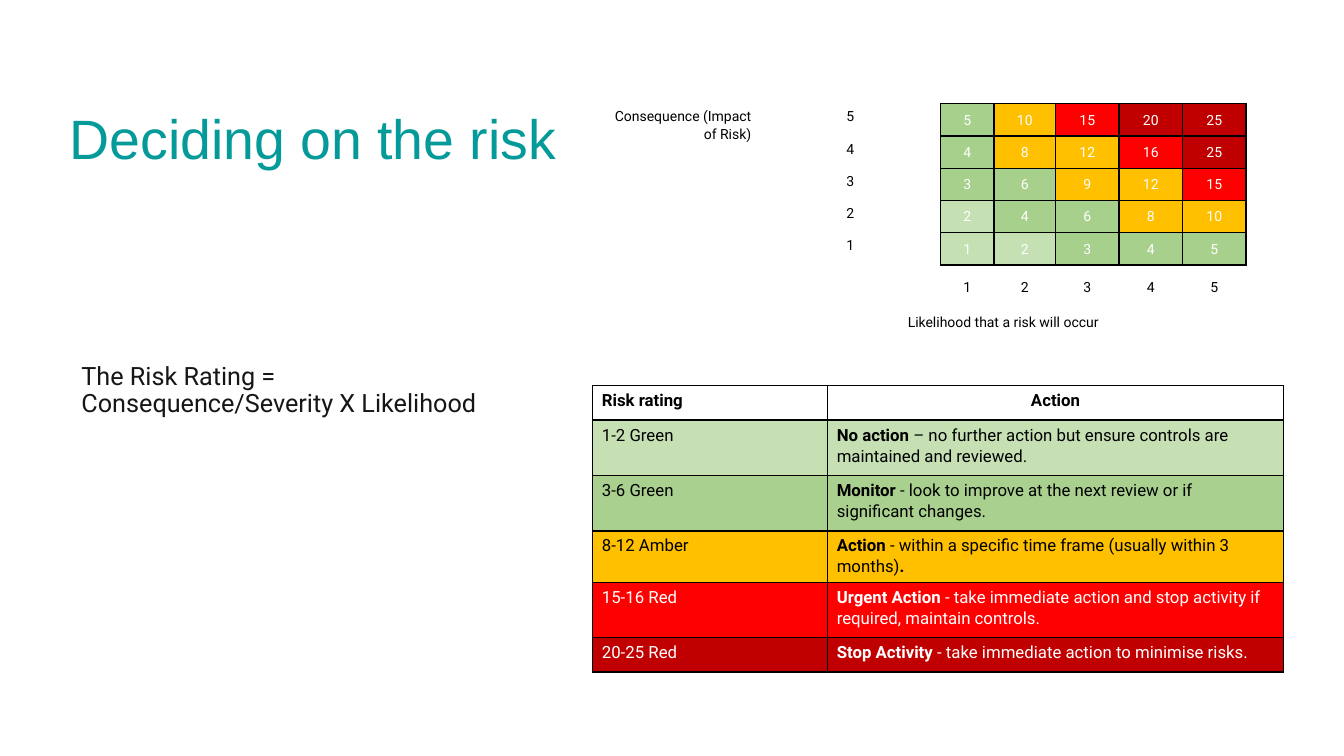
from lxml import etree
from pptx import Presentation
from pptx.dml.color import RGBColor
from pptx.enum.text import MSO_ANCHOR as Anchor, PP_ALIGN as Align
from pptx.oxml.ns import qn
from pptx.util import Inches, Pt

BLACK, WHITE = "000000", "FFFFFF"
NO_GRID_STYLE = "{2D5ABB26-0587-4C30-8999-92F81FD0307C}"


def write(holder, pieces, size, color=BLACK, align=Align.LEFT, spacing=1.07, font="Roboto"):
    """Fill a cell or box with (text, bold) pieces in one paragraph."""
    paragraph = holder.text_frame.paragraphs[0]
    paragraph.alignment = align
    paragraph.line_spacing = spacing
    for words, bold in pieces:
        run = paragraph.add_run()
        run.text = words
        run.font.size = Pt(size)
        run.font.name = font
        run.font.bold = bold
        run.font.color.rgb = RGBColor.from_string(color)


def paint(cell, fill=None):
    """Outline a cell in black and give it an optional fill."""
    properties = cell._tc.get_or_add_tcPr()
    for position, side in enumerate(("lnL", "lnR", "lnT", "lnB")):
        line = etree.Element(qn(f"a:{side}"), w=str(Pt(1)))
        solid = etree.SubElement(line, qn("a:solidFill"))
        etree.SubElement(solid, qn("a:srgbClr"), val=BLACK)
        properties.insert(position, line)
    if fill:
        cell.fill.solid()
        cell.fill.fore_color.rgb = RGBColor.from_string(fill)


deck = Presentation()
deck.slide_width, deck.slide_height = Inches(13.33), Inches(7.5)
slide = deck.slides.add_slide(deck.slide_layouts[6])

# Heading and formula
for words, box, anchor, size, color, font in [
    ("Deciding on the risk", (0.59, 1.03, 5.75, 0.74), Anchor.MIDDLE, 39.6, "049A99", "Arial"),
    ("The Risk Rating = Consequence/Severity X Likelihood", (0.71, 2.59, 4.52, 1.61),
     Anchor.BOTTOM, 18, "171616", "Roboto"),
]:
    text_box = slide.shapes.add_textbox(*map(Inches, box))
    text_box.text_frame.word_wrap = True
    text_box.text_frame.vertical_anchor = anchor
    write(text_box, [(words, False)], size, color, spacing=0.9, font=font)

# One grid holds the risk matrix above and the action list below
column_widths = [1.66, 0.67, 1.12, 0.53, 0.61, 0.63, 0.63, 0.63, 0.37]
row_heights = [0.32] * 5 + [0.44, 0.34, 0.42] + [0.34, 0.55, 0.55, 0.51, 0.55, 0.34]
frame = slide.shapes.add_table(len(row_heights), len(column_widths), Inches(5.88), Inches(1.03),
                               Inches(sum(column_widths)), Inches(sum(row_heights)))
grid = frame.table
grid.first_row = grid.horz_banding = False
grid._tbl.tblPr.find(qn("a:tableStyleId")).text = NO_GRID_STYLE
for column, width in zip(grid.columns, column_widths):
    column.width = Inches(width)
for row, height in zip(grid.rows, row_heights):
    row.height = Inches(height)
for cell in grid.iter_cells():
    cell.fill.background()
    cell.margin_left = cell.margin_right = Inches(0.07)
    cell.margin_top = cell.margin_bottom = 0

# Upper rating, matrix fill, list fill, list text colour, label, action
bands = [
    (2, "C5E0B3", "C6E0B4", BLACK, "1-2 Green",
     [("No action", True),
      (" – no further action but ensure controls are maintained and reviewed.", False)]),
    (6, "A8D08D", "A9D08E", BLACK, "3-6 Green",
     [("Monitor", True),
      (" - look to improve at the next review or if significant changes.", False)]),
    (12, "FFC000", "FFC000", BLACK, "8-12 Amber",
     [("Action", True),
      (" - within a specific time frame (usually within 3 months)", False), (".", True)]),
    (16, "FF0000", "FF0000", WHITE, "15-16 Red",
     [("Urgent Action ", True),
      ("- take immediate action and stop activity if required, maintain controls.", False)]),
    (25, "C00000", "C00000", WHITE, "20-25 Red",
     [("Stop Activity", True), (" - take immediate action to minimise risks.", False)]),
]

# Risk matrix
ratings = [
    [5, 10, 15, 20, 25],
    [4, 8, 12, 16, 25],
    [3, 6, 9, 12, 15],
    [2, 4, 6, 8, 10],
    [1, 2, 3, 4, 5],
]
first_rating_column = 3
likelihood_row = len(ratings)
axis_labels = [(0, 0, likelihood_row, 0, "Consequence (Impact of Risk)", Align.RIGHT),
               (likelihood_row + 1, 1, likelihood_row + 1, 7,
                "Likelihood that a risk will occur", Align.CENTER)]
axis_labels += [(row, 1, row, 2, str(5 - row), Align.CENTER) for row in range(5)]
for top, left, bottom, right, words, align in axis_labels:
    label = grid.cell(top, left)
    label.merge(grid.cell(bottom, right))
    label.margin_left = label.margin_right = Inches(0.09)
    label.margin_top = label.margin_bottom = Inches(0.04)
    write(label, [(words, False)], 10, align=align)

for row, row_ratings in enumerate(ratings):
    for column, rating in enumerate(row_ratings, first_rating_column):
        cell = grid.cell(row, column)
        cell.vertical_anchor = Anchor.MIDDLE
        paint(cell, next(band[1] for band in bands if rating <= band[0]))
        write(cell, [(str(rating), False)], 10, WHITE, Align.CENTER)
for likelihood in range(1, 6):
    cell = grid.cell(likelihood_row, first_rating_column + likelihood - 1)
    cell.vertical_anchor = Anchor.MIDDLE
    write(cell, [(str(likelihood), False)], 10, align=Align.CENTER)

# Action list
action_rows = [(None, BLACK, [("Risk rating", True)], [("Action", True)], Align.CENTER)]
action_rows += [(fill, color, [(label, False)], action, Align.LEFT)
                for _, _, fill, color, label, action in bands]
for row, (fill, color, rating_text, action_text, action_align) in enumerate(action_rows, 8):
    for column in range(len(column_widths)):
        paint(grid.cell(row, column), fill)
    for left, right, pieces, align in [(0, 1, rating_text, Align.LEFT),
                                       (2, 8, action_text, action_align)]:
        cell = grid.cell(row, left)
        cell.merge(grid.cell(row, right))
        cell.margin_left = cell.margin_right = Inches(0.09)
        cell.margin_top = cell.margin_bottom = Inches(0.04)
        write(cell, pieces, 12, color, align)

deck.save("out.pptx")
